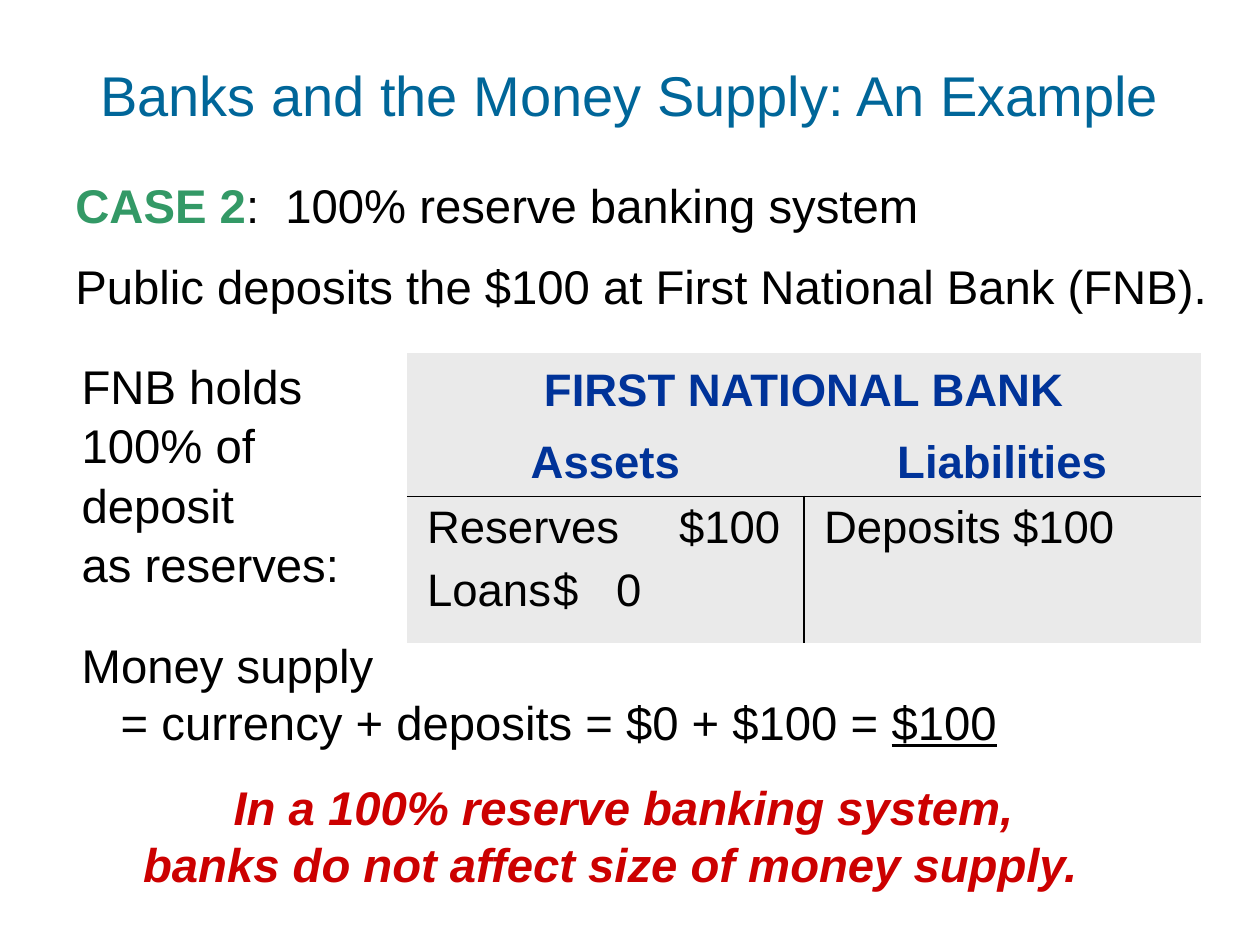
"""Build the slide on a 100% reserve banking system and its T-account."""
from dataclasses import dataclass

import pptx
import pptx.dml.color
import pptx.enum.shapes
import pptx.enum.text
import pptx.oxml.ns
import pptx.util
from lxml import etree

RGBColor = pptx.dml.color.RGBColor
Align = pptx.enum.text.PP_ALIGN
Anchor = pptx.enum.text.MSO_ANCHOR

TEAL = RGBColor(0x00, 0x66, 0x99)
GREEN = RGBColor(0x33, 0x99, 0x66)
NAVY = RGBColor(0x00, 0x33, 0x99)
RED = RGBColor(0xCC, 0x00, 0x00)
BLACK = RGBColor(0x00, 0x00, 0x00)
WHITE = RGBColor(0xFF, 0xFF, 0xFF)
GRAY = RGBColor(0xEA, 0xEA, 0xEA)

WIDTH, HEIGHT = pptx.util.Inches(10), pptx.util.Inches(7.5)
COLUMN, ROW = WIDTH // 20, HEIGHT // 30
BODY_SIZE, TABLE_SIZE = 27, 26
AMOUNT_TABS = ((2.06, "l"), (2.87, "r"))


@dataclass(frozen=True)
class Area:
    """A rectangle in grid columns and rows."""
    left: float
    top: float
    width: float
    height: float

    def box(self) -> tuple[int, int, int, int]:
        """Return left, top, width and height in EMU."""
        return (int(self.left * COLUMN), int(self.top * ROW),
                int(self.width * COLUMN), int(self.height * ROW))


@dataclass(frozen=True)
class Run:
    """A stretch of text with its own emphasis."""
    text: str
    color: RGBColor = BLACK
    bold: bool = False
    italic: bool = False
    underline: bool = False


@dataclass(frozen=True)
class Line:
    """A paragraph with its side margins in inches."""
    runs: tuple[Run, ...]
    indent: float = 0
    right: float = 0


@dataclass(frozen=True)
class Cell:
    """A cell of the T-account with the sides that are ruled."""
    row: int
    column: int
    lines: tuple[Line, ...]
    ruled: str
    heading: bool = True


def heading(text: str) -> tuple[Line, ...]:
    """Return the single line of a table heading."""
    return (Line((Run(text, NAVY, bold=True),)),)


def entry(text: str) -> Line:
    """Return one entry of the account."""
    return Line((Run(text),), indent=0.06)


def write(frame, lines, *, size: float, align=Align.LEFT, anchor=Anchor.TOP,
          wrap: bool = True, spacing: float = 1.0, before: float = 0,
          tabs=()) -> None:
    """Fill a text frame with formatted lines."""
    frame.word_wrap = wrap
    frame.vertical_anchor = anchor
    for number, line in enumerate(lines):
        paragraph = frame.add_paragraph() if number else frame.paragraphs[0]
        properties = paragraph._p.get_or_add_pPr()
        properties.set("marL", str(pptx.util.Inches(line.indent)))
        properties.set("marR", str(pptx.util.Inches(line.right)))
        properties.set("indent", "0")
        if tabs:
            stops = etree.SubElement(properties, pptx.oxml.ns.qn("a:tabLst"))
            for position, side in tabs:
                etree.SubElement(stops, pptx.oxml.ns.qn("a:tab"),
                                 pos=str(pptx.util.Inches(position)), algn=side)
        paragraph.alignment = align
        paragraph.line_spacing = spacing
        paragraph.space_before = pptx.util.Pt(before if number else 0)
        for part in line.runs:
            run = paragraph.add_run()
            run.text = part.text
            run.font.name = "Arial"
            run.font.size = pptx.util.Pt(size)
            run.font.color.rgb = part.color
            run.font.bold = part.bold
            run.font.italic = part.italic
            run.font.underline = part.underline


def rule_cell(cell, ruled: str) -> None:
    """Draw the ruled sides of a cell and clear the others."""
    properties = cell._tc.get_or_add_tcPr()
    for side in "LRTB":
        edge = etree.SubElement(properties, pptx.oxml.ns.qn(f"a:ln{side}"),
                                w=str(pptx.util.Pt(1)))
        if side in ruled:
            fill = etree.SubElement(edge, pptx.oxml.ns.qn("a:solidFill"))
            etree.SubElement(fill, pptx.oxml.ns.qn("a:srgbClr"), val=str(BLACK))
        else:
            etree.SubElement(edge, pptx.oxml.ns.qn("a:noFill"))


def add_text(slide, area: Area, lines, **text_format) -> None:
    """Add a text box over an area of the grid."""
    box = slide.shapes.add_textbox(*area.box())
    write(box.text_frame, lines, size=BODY_SIZE, **text_format)


def add_account(slide, area: Area, row_heights, cells) -> None:
    """Add the bank's T-account."""
    account = slide.shapes.add_table(len(row_heights), 2, *area.box()).table
    for row, height in zip(account.rows, row_heights):
        row.height = int(height * ROW)
    account.cell(0, 0).merge(account.cell(0, 1))
    for item in cells:
        cell = account.cell(item.row, item.column)
        rule_cell(cell, item.ruled)
        cell.fill.solid()
        cell.fill.fore_color.rgb = GRAY
        write(cell.text_frame, item.lines, size=TABLE_SIZE, before=7,
              align=Align.CENTER if item.heading else Align.LEFT,
              tabs=() if item.heading else AMOUNT_TABS)
        cell.vertical_anchor = Anchor.MIDDLE if item.heading else Anchor.TOP


def add_conclusion(slide, area: Area, lines) -> None:
    """Add the closing statement on a white panel."""
    panel = slide.shapes.add_shape(
        pptx.enum.shapes.MSO_SHAPE.RECTANGLE, *area.box())
    panel.shadow.inherit = False
    panel.fill.solid()
    panel.fill.fore_color.rgb = WHITE
    panel.line.fill.background()
    write(panel.text_frame, lines, size=BODY_SIZE, align=Align.CENTER)


def main() -> None:
    """Build and save the slide."""
    deck = pptx.Presentation()
    deck.slide_width, deck.slide_height = WIDTH, HEIGHT
    slide = deck.slides.add_slide(deck.slide_layouts[5])

    title = slide.shapes.title
    title.left, title.top, title.width, title.height = Area(0, 1, 20, 4).box()
    write(title.text_frame,
          [Line((Run("Banks and the Money Supply: An Example", TEAL),))],
          size=32, align=Align.CENTER, anchor=Anchor.MIDDLE)

    add_text(slide, Area(1, 5.32, 18.66, 5), [
        Line((Run("CASE 2", GREEN, bold=True),
              Run(":  100% reserve banking system"))),
        Line((Run("Public deposits the $100 at First National Bank (FNB)."),)),
    ], spacing=1.05, before=12)

    add_account(slide, Area(6.46, 11.2, 12.6, 9.2), (2.4, 2.16, 4.64), [
        Cell(0, 0, heading("FIRST NATIONAL BANK"), ""),
        Cell(0, 1, (), ""),
        Cell(1, 0, heading("Assets"), "B"),
        Cell(1, 1, heading("Liabilities"), "B"),
        Cell(2, 0, (entry("Reserves\t$100"), entry("Loans\t$\t0")), "RT", False),
        Cell(2, 1, (entry("Deposits\t$100"),), "LT", False),
    ])

    holding = ("FNB holds", "100% of", "deposit", "as reserves:")
    add_text(slide, Area(1.1, 11.04, 4.52, 8.04),
             [Line((Run(text),)) for text in holding], wrap=False, spacing=1.05)

    add_text(slide, Area(1.1, 20, 16.76, 4.04), [
        Line((Run("Money supply"),)),
        Line((Run("= currency + deposits = $0 + $100 = "),
              Run("$100", underline=True)), indent=0.31),
    ])

    add_conclusion(slide, Area(0, 24.52, 20, 5.48), [
        Line((Run(text, RED, bold=True, italic=True),), right=margin)
        for text, margin in (("In a 100% reserve banking system,", 0.1),
                             ("banks do not affect size of money supply.", 0.31))
    ])
    deck.save("out.pptx")


if __name__ == "__main__":
    main()
